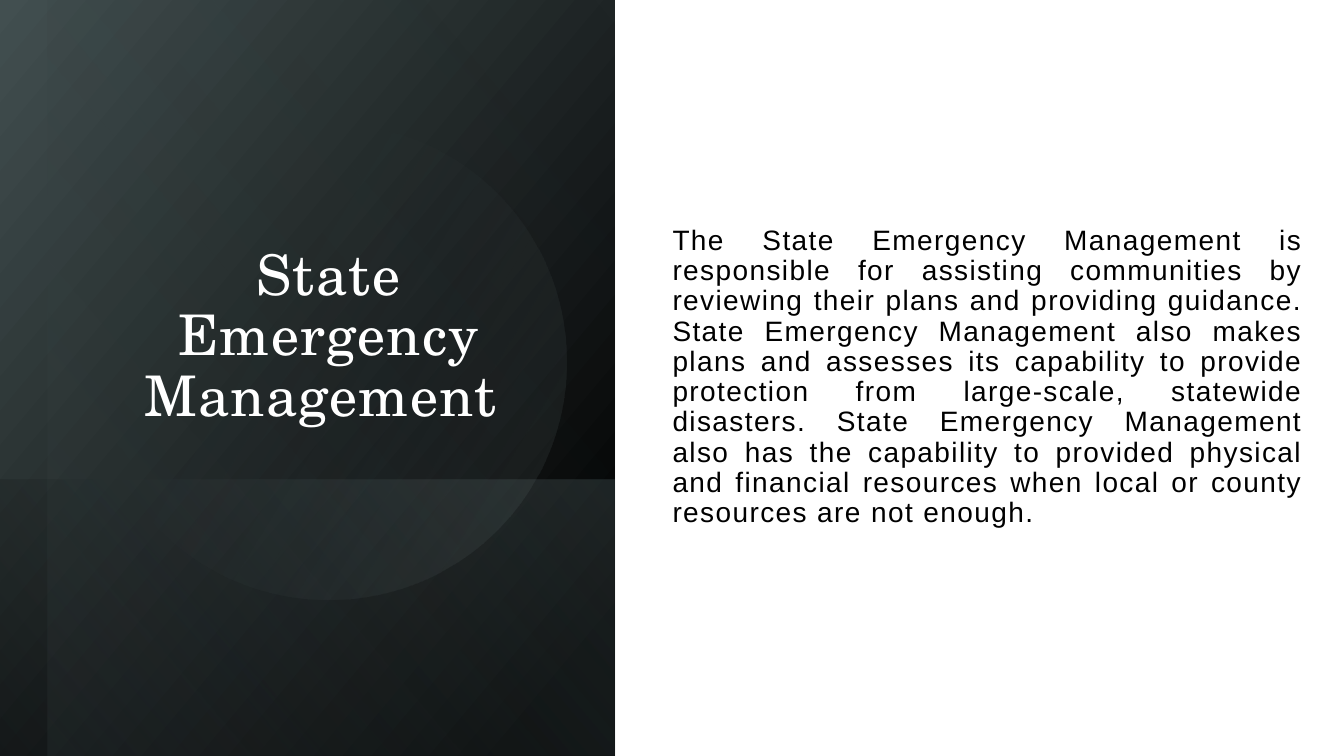
from pptx import Presentation
from pptx.dml.color import RGBColor
from pptx.enum.shapes import MSO_SHAPE as Shape
from pptx.enum.text import MSO_ANCHOR as Anchor, MSO_AUTO_SIZE as Fit, PP_ALIGN as Align
from pptx.oxml.ns import qn
from pptx.oxml.xmlchemy import OxmlElement as Element
from pptx.util import Inches, Pt

TITLE = "State Emergency Management "
BODY = (
    "The State Emergency Management is responsible for assisting communities by "
    "reviewing their plans and providing guidance. State Emergency Management also "
    "makes plans and assesses its capability to provide protection from large-scale, "
    "statewide disasters. State Emergency Management also has the capability to "
    "provided physical and financial resources when local or county resources are "
    "not enough."
)


def color(code):
    return RGBColor.from_string(code)


def add_block(slide, kind, box):
    block = slide.shapes.add_shape(kind, *map(Inches, box))
    block.shadow.inherit = False
    block.line.fill.background()
    return block


def shade(block, stops, angle):
    """Fill with a gradient of (position, colour, opacity) stops, angle clockwise."""
    fill = block.fill
    fill.gradient()
    fill.gradient_angle = 360 - angle
    for stop, (place, code, _) in zip(fill.gradient_stops, stops):
        stop.position = place / 100
        stop.color.rgb = color(code)
    tints = block.element.spPr.iter(qn("a:srgbClr"))
    for tint, (_, _, opacity) in zip(tints, stops):
        if opacity < 100:
            alpha = Element("a:alpha")
            alpha.set("val", str(opacity * 1000))
            tint.append(alpha)


def add_panel(slide, box, stops, angle):
    """Add a shaded rectangle, mirrored and turned a quarter."""
    panel = add_block(slide, Shape.RECTANGLE, box)
    panel.rotation = 90
    panel.element.spPr.find(qn("a:xfrm")).set("flipH", "1")
    shade(panel, stops, angle)


def put_text(holder, text, box, *, font, size, ink, align, anchor, after=0):
    holder.left, holder.top, holder.width, holder.height = map(Inches, box)
    frame = holder.text_frame
    frame.word_wrap = True
    frame.auto_size = Fit.NONE
    frame.vertical_anchor = anchor
    para = frame.paragraphs[0]
    para.alignment = align
    para.line_spacing = 0.9
    para.space_before = Pt(0)
    para.space_after = Pt(after)
    props = para._p.get_or_add_pPr()
    props.set("marL", "0")
    props.set("indent", "0")
    props.append(Element("a:buNone"))
    run = para.add_run()
    run.text = text
    run.font.name = font
    run.font.size = Pt(size)
    run.font.color.rgb = color(ink)
    run._r.get_or_add_rPr().set("spc", "100")


def main():
    deck = Presentation()
    deck.slide_width, deck.slide_height = Inches(13.33), Inches(7.5)
    slide = deck.slides.add_slide(deck.slide_layouts[1])
    title, body = slide.placeholders

    page = add_block(slide, Shape.RECTANGLE, (0, 0, 13.33, 7.5))
    page.fill.solid()
    page.fill.fore_color.rgb = color("FFFFFF")

    add_panel(slide, (-0.7, 0.7, 7.5, 6.1),
              [(8, "000000", 100), (100, "424F50", 100)], 50)
    add_panel(slide, (1.67, 3.08, 2.74, 6.1),
              [(2, "58696B", 29), (100, "000000", 30)], 130)
    add_panel(slide, (-0.46, 0.93, 7.5, 5.63),
              [(0, "000000", 0), (99, "58696B", 11)], 130)

    disc = add_block(slide, Shape.OVAL, (0.9, 1.23, 4.72, 4.72))
    disc.rotation = 101.6
    shade(disc, [(39, "58696B", 0), (100, "97A8AA", 15)], 290)

    put_text(title, TITLE, (0.95, 2.68, 4.63, 1.62), font="TeX Gyre Schola",
             size=40, ink="FFFFFF", align=Align.CENTER, anchor=Anchor.BOTTOM)
    put_text(body, BODY, (6.57, 0.71, 6.45, 6.07), font="Arial", size=20,
             ink="000000", align=Align.JUSTIFY, anchor=Anchor.MIDDLE, after=6)
    for holder in (title, body):
        slide.shapes.element.append(holder.element)

    deck.save("out.pptx")


if __name__ == "__main__":
    main()
